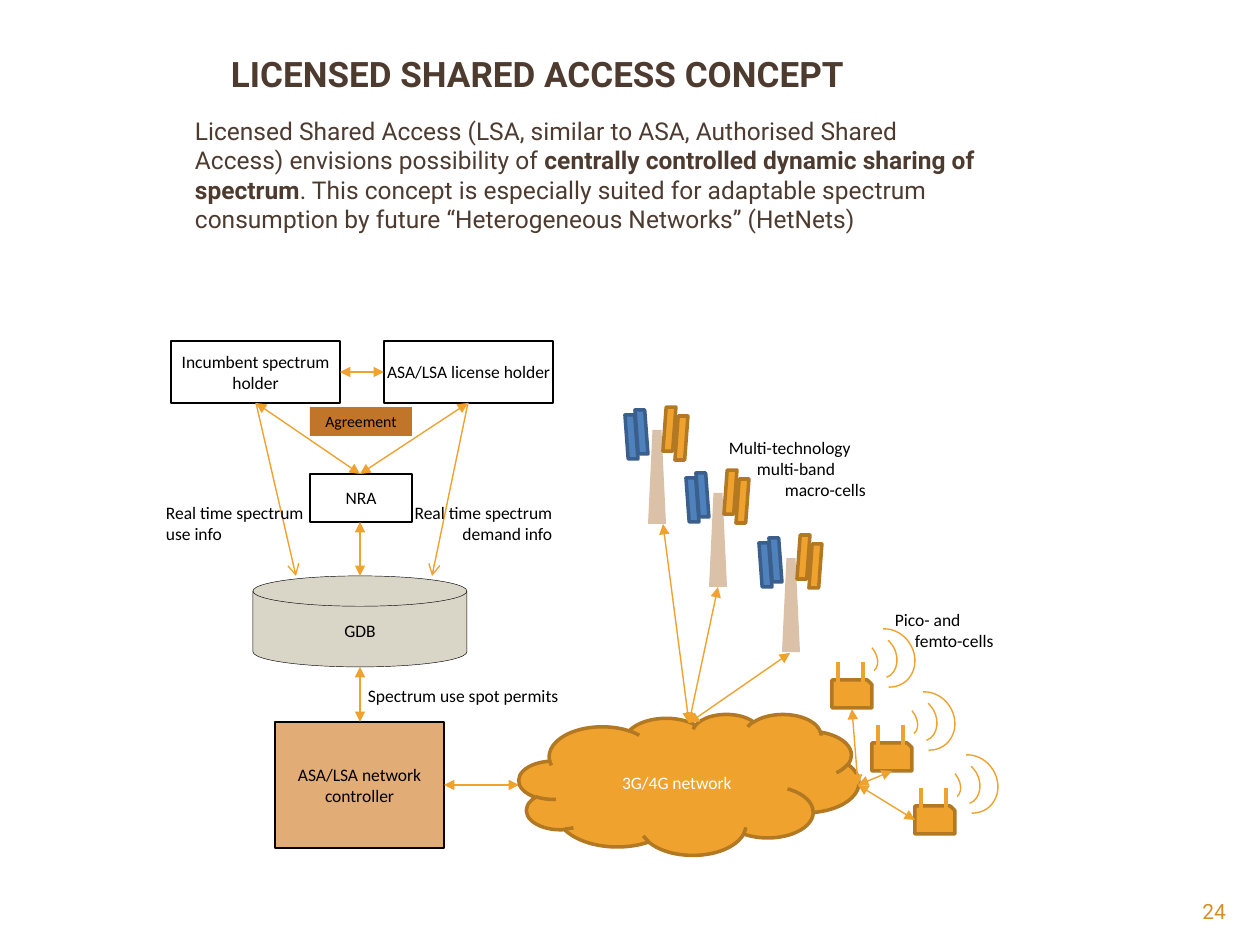
import dataclasses

import lxml.etree
import pptx
import pptx.dml.color
import pptx.enum.shapes
import pptx.enum.text
import pptx.oxml.ns
import pptx.util

SHAPE = pptx.enum.shapes.MSO_SHAPE
ALIGN = pptx.enum.text.PP_ALIGN
ANCHOR = pptx.enum.text.MSO_ANCHOR
EMU_PER_PX = 914400 / 126


@dataclasses.dataclass(frozen=True)
class Theme:
    heading_font: str = "Roboto"
    label_font: str = "Calibri"
    title_size: int = 20
    body_size: int = 14
    number_size: int = 12
    label_size: int = 10
    small_size: int = 9
    brown: str = "4E3B30"
    number: str = "D48F29"
    black: str = "000000"
    white: str = "FFFFFF"
    orange: str = "F0A22E"
    orange_edge: str = "B27822"
    blue: str = "4F81BD"
    blue_edge: str = "3A5F8C"
    mast: str = "DBC1A7"
    database: str = "D9D5C7"
    controller: str = "E2AC76"
    agreement: str = "C17529"
    hairline: float = 0.25
    thin: float = 0.75
    arrow: float = 0.79
    edge: float = 2
    antenna: float = 2.25


def px(length):
    return pptx.util.Emu(round(length * EMU_PER_PX))


def rgb(value):
    return pptx.dml.color.RGBColor.from_string(value)


def apply_format(target, values):
    for name, value in values.items():
        setattr(target, name, value)


class SlideBuilder:
    def __init__(self, slide, theme):
        self.slide = slide
        self.theme = theme

    def fill_text(self, shape, paragraphs, size=None, font=None, color=None, bold=False,
                  align=ALIGN.LEFT, anchor=ANCHOR.MIDDLE, insets=(3, 0, 3, 0),
                  step=0, spacing=None):
        """Fill a shape with text; each paragraph is a list of (text, bold) runs
        or a string, and is indented by step px more than the one before."""
        frame = shape.text_frame
        margins = zip(("left", "top", "right", "bottom"), insets)
        apply_format(frame, {f"margin_{side}": px(inset) for side, inset in margins})
        apply_format(frame, {"word_wrap": True, "vertical_anchor": anchor})
        for index, content in enumerate(paragraphs):
            paragraph = frame.add_paragraph() if index else frame.paragraphs[0]
            apply_format(paragraph, {"alignment": align, **(spacing or {})})
            if index and step:
                paragraph._p.get_or_add_pPr().set("marL", str(px(index * step)))
            runs = [(content, bold)] if isinstance(content, str) else content
            for text, heavy in runs:
                run = paragraph.add_run()
                run.text = text
                apply_format(run.font, {
                    "name": font or self.theme.label_font,
                    "size": pptx.util.Pt(size or self.theme.label_size),
                    "bold": heavy,
                })
                run.font.color.rgb = rgb(color or self.theme.black)

    def text(self, box, paragraphs, **style):
        self.fill_text(self.slide.shapes.add_textbox(*map(px, box)), paragraphs, **style)

    def shape(self, kind, box, fill=None, line=None, width=None, text=None,
              flip=False, rotation=0, adjustments=(), **style):
        shape = self.slide.shapes.add_shape(kind, *map(px, box))
        shape.shadow.inherit = False
        shape.rotation = rotation
        for index, value in enumerate(adjustments):
            shape.adjustments[index] = value
        if flip:
            shape._element.spPr.get_or_add_xfrm().set("flipV", "1")
        if fill:
            shape.fill.solid()
            shape.fill.fore_color.rgb = rgb(fill)
        else:
            shape.fill.background()
        if line:
            shape.line.color.rgb = rgb(line)
            shape.line.width = pptx.util.Pt(width)
        else:
            shape.line.fill.background()
        if text:
            self.fill_text(shape, text, **{"align": ALIGN.CENTER, **style})

    def line(self, start, end, head="triangle", tail="triangle", width=None):
        connector = self.slide.shapes.add_connector(
            pptx.enum.shapes.MSO_CONNECTOR.STRAIGHT, *map(px, (*start, *end)))
        connector.line.color.rgb = rgb(self.theme.orange)
        connector.line.width = pptx.util.Pt(width or self.theme.arrow)
        qualify = pptx.oxml.ns.qn
        outline = connector.line._get_or_add_ln()
        for tag, kind in (("a:headEnd", head), ("a:tailEnd", tail)):
            if kind:
                lxml.etree.SubElement(outline, qualify(tag), type=kind)
        lxml.etree.SubElement(connector._element.spPr, qualify("a:effectLst"))

    def tower(self, x, y):
        theme = self.theme
        self.shape(SHAPE.TRAPEZOID, (x, y, 18, 94), theme.mast)
        orange, blue = (theme.orange, theme.orange_edge), (theme.blue, theme.blue_edge)
        for dx, dy, (fill, edge), flip in ((15, -23, orange, False), (27, -14, orange, False),
                                           (-23, -15, blue, True), (-13, -20, blue, True)):
            self.shape(SHAPE.PARALLELOGRAM, (x + dx, y + dy, 13, 44),
                       fill, edge, theme.edge, flip=flip)

    def small_cell(self, x, y):
        theme = self.theme
        self.shape(SHAPE.SNIP_1_RECTANGLE, (x, y, 40, 28),
                   theme.orange, theme.orange_edge, theme.edge)
        for dx in (6, 31):
            self.line((x + dx, y + 2), (x + dx, y - 18), None, None, theme.antenna)
        waves = (((11, -37, 38, 26), 50.3, ()),
                 ((25, -49, 60, 54), 56.8, (123.26, 18.05)),
                 ((26, -40, 43, 34), 71, (135.63, 0)))
        for (dx, dy, width, height), rotation, adjustments in waves:
            self.shape(SHAPE.ARC, (x + dx, y + dy, width, height), line=theme.orange,
                       width=theme.arrow, rotation=rotation, adjustments=adjustments)


def draw_texts(builder):
    theme = builder.theme
    heading = {"font": theme.heading_font, "color": theme.brown}
    builder.text((218, 37, 809, 72), ["LICENSED SHARED ACCESS CONCEPT"],
                 size=theme.title_size, bold=True, insets=(13, 6, 13, 6), **heading)
    body = [
        ("Licensed Shared Access (LSA, similar to ASA, Authorised Shared Access) "
         "envisions possibility of ", False),
        ("centrally controlled dynamic sharing of spectrum", True),
        (". This concept is especially suited for adaptable spectrum consumption "
         "by future “Heterogeneous Networks” (HetNets)", False),
    ]
    builder.text((180, 116, 809, 146), [body], size=theme.body_size,
                 anchor=ANCHOR.TOP, insets=(15, 0, 13, 6), **heading)
    builder.text((1134, 892, 105, 34), ["24"], size=theme.number_size,
                 font=theme.heading_font, color=theme.number, align=ALIGN.RIGHT,
                 anchor=ANCHOR.TOP, insets=(13, 6, 13, 6))


def draw_sharing_control(builder):
    theme = builder.theme
    framed = {"line": theme.black, "width": theme.thin}
    for box, label in (((310, 474, 102, 48), "NRA"),
                       ((171, 341, 169, 62), "Incumbent spectrum holder"),
                       ((384, 341, 169, 62), "ASA/LSA license holder")):
        builder.shape(SHAPE.RECTANGLE, box, theme.white, text=[label], **framed)
    builder.shape(SHAPE.FLOWCHART_MAGNETIC_DISK, (253, 576, 214, 91), theme.database,
                  theme.black, theme.hairline, ["GDB"], insets=(13, 6, 13, 6),
                  spacing={"line_spacing": 1.15, "space_before": pptx.util.Pt(10)})
    builder.shape(SHAPE.RECTANGLE, (275, 722, 169, 126), theme.controller,
                  text=["ASA/LSA network controller"], **framed)
    builder.shape(SHAPE.RECTANGLE, (365, 672, 285, 48), theme.white,
                  text=["Spectrum use spot permits"], align=ALIGN.LEFT)
    incumbent, licensee, regulator = (256, 403), (468, 403), (360, 474)
    for start, end in ((regulator, incumbent), (regulator, licensee),
                       ((340, 372), (384, 372)), ((360, 522), (360, 576)),
                       ((360, 667), (360, 722)), ((444, 785), (519, 785))):
        builder.line(start, end)
    builder.line(incumbent, (296, 576), None, "arrow")
    builder.line(licensee, (432, 576), None, "arrow")
    builder.shape(SHAPE.RECTANGLE, (310, 407, 102, 29), theme.agreement,
                  text=["Agreement"], size=theme.small_size)
    builder.text((163, 474, 152, 98), ["Real time spectrum use info"])
    builder.text((403, 474, 152, 98), ["Real time spectrum demand info"], align=ALIGN.RIGHT)


def draw_network(builder):
    theme = builder.theme
    builder.shape(SHAPE.RECTANGLE, (892, 585, 134, 91), theme.white,
                  text=["Pico- and", "femto-cells"], align=ALIGN.LEFT, step=20)
    builder.shape(SHAPE.RECTANGLE, (726, 423, 218, 91), theme.white, align=ALIGN.LEFT,
                  text=["Multi-technology", "multi-band", "macro-cells"], step=28)
    gap = pptx.util.Pt(10)
    builder.shape(SHAPE.CLOUD, (519, 714, 340, 141), theme.orange, theme.orange_edge,
                  theme.edge, ["3G/4G network"], color=theme.white, insets=(13, 6, 13, 6),
                  spacing={"line_spacing": 1.15, "space_before": gap, "space_after": gap})
    for place in ((648, 430), (709, 493), (782, 558)):
        builder.tower(*place)
    for place in ((832, 680), (872, 743), (915, 806)):
        builder.small_cell(*place)
    links = {(689, 723): ((663, 524), (718, 587), (790, 653)),
             (858, 785): ((852, 709), (892, 771), (915, 820))}
    for hub, cells in links.items():
        for cell in cells:
            builder.line(hub, cell)


def main():
    presentation = pptx.Presentation()
    apply_format(presentation, {"slide_width": px(1260), "slide_height": px(945)})
    slide = presentation.slides.add_slide(presentation.slide_layouts[6])
    builder = SlideBuilder(slide, Theme())
    draw_texts(builder)
    draw_sharing_control(builder)
    draw_network(builder)
    presentation.save("out.pptx")


if __name__ == "__main__":
    main()
